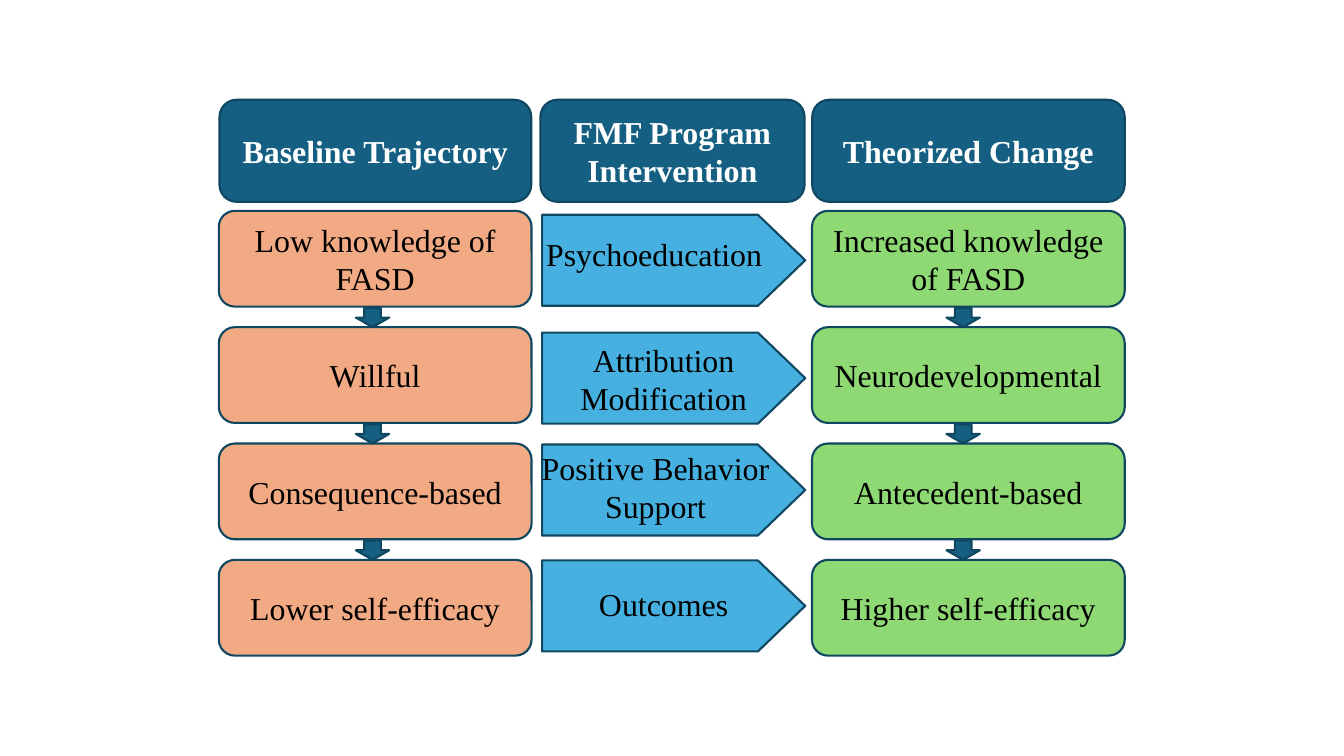
from pptx import Presentation
from pptx.dml.color import RGBColor
from pptx.enum.shapes import MSO_SHAPE
from pptx.enum.text import MSO_ANCHOR, PP_ALIGN
from pptx.util import Pt

COLORS = {
    "header": "156082", "baseline": "F2AA84", "program": "46B1E1",
    "change": "8ED973", "outline": "104760", "dark": "000000", "light": "FFFFFF",
}
HEADERS = [
    ("Baseline Trajectory", 156.8, 222.7),
    ("FMF Program Intervention", 386, 188.7),
    ("Theorized Change", 580.2, 223.2),
]
BASELINE = ["Low knowledge of FASD", "Willful", "Consequence-based", "Lower self-efficacy"]
CHANGE = ["Increased knowledge of FASD", "Neurodevelopmental", "Antecedent-based",
          "Higher self-efficacy"]
PROGRAM = [
    ("Psychoeducation", 153.4, (383, 164.2), PP_ALIGN.LEFT),
    ("Attribution Modification", 237.6, (378, 239.8), PP_ALIGN.CENTER),
    ("Positive Behavior Support", 317.5, (372.2, 316.8), PP_ALIGN.CENTER),
    ("Outcomes", 400.3, (378, 414), PP_ALIGN.CENTER),
]
STAGE_COLUMNS = [
    (BASELINE, "baseline", 156.3, 254.2),
    (CHANGE, "change", 580, 676.1),
]

HEADER_TOP, HEADER_HEIGHT = 71.3, 72.9
STAGE_TOP, STAGE_PITCH = 150.6, 83.1
STAGE_WIDTH, STAGE_HEIGHT = 223.4, 68.4
STEP_WIDTH, STEP_HEIGHT = 23.8, 13.7
PROGRAM_LEFT, PROGRAM_WIDTH, PROGRAM_HEIGHT = 387.2, 188, 65
LABEL_WIDTH, LABEL_HEIGHT = 192.2, 62


def rgb(name):
    return RGBColor.from_string(COLORS[name])


def write(shape, text, color="dark", bold=False, align=PP_ALIGN.CENTER,
          anchor=MSO_ANCHOR.MIDDLE):
    frame = shape.text_frame
    frame.text = text
    frame.word_wrap = True
    frame.vertical_anchor = anchor
    paragraph = frame.paragraphs[0]
    paragraph.alignment = align
    paragraph.space_after = Pt(5.7)
    font = paragraph.runs[0].font
    font.name, font.size, font.bold = "Times New Roman", Pt(22.8), bold
    font.color.rgb = rgb(color)


def draw(slide, kind, fill, left, top, width, height):
    shape = slide.shapes.add_shape(kind, Pt(left), Pt(top), Pt(width), Pt(height))
    shape.shadow.inherit = False
    shape.fill.solid()
    shape.fill.fore_color.rgb = rgb(fill)
    shape.line.color.rgb = rgb("outline")
    shape.line.width = Pt(1.5)
    return shape


def main():
    deck = Presentation()
    deck.slide_width, deck.slide_height = Pt(960), Pt(540)
    slide = deck.slides.add_slide(deck.slide_layouts[6])

    for text, left, width in HEADERS:
        header = draw(slide, MSO_SHAPE.ROUNDED_RECTANGLE, "header",
                      left, HEADER_TOP, width, HEADER_HEIGHT)
        write(header, text, "light", bold=True)

    for stages, fill, left, step_left in STAGE_COLUMNS:
        for row, text in enumerate(stages):
            top = STAGE_TOP + row * STAGE_PITCH
            stage = draw(slide, MSO_SHAPE.ROUNDED_RECTANGLE, fill,
                         left, top, STAGE_WIDTH, STAGE_HEIGHT)
            write(stage, text)
            if row:
                draw(slide, MSO_SHAPE.DOWN_ARROW, "header",
                     step_left, top - STEP_HEIGHT, STEP_WIDTH, STEP_HEIGHT)

    for text, top, (label_left, label_top), align in PROGRAM:
        arrow = draw(slide, MSO_SHAPE.RIGHT_ARROW, "program",
                     PROGRAM_LEFT, top, PROGRAM_WIDTH, PROGRAM_HEIGHT)
        arrow.adjustments[0], arrow.adjustments[1] = 1, 0.52
        label = slide.shapes.add_textbox(Pt(label_left), Pt(label_top),
                                         Pt(LABEL_WIDTH), Pt(LABEL_HEIGHT))
        write(label, text, align=align, anchor=MSO_ANCHOR.TOP)

    deck.save("out.pptx")


if __name__ == "__main__":
    main()
